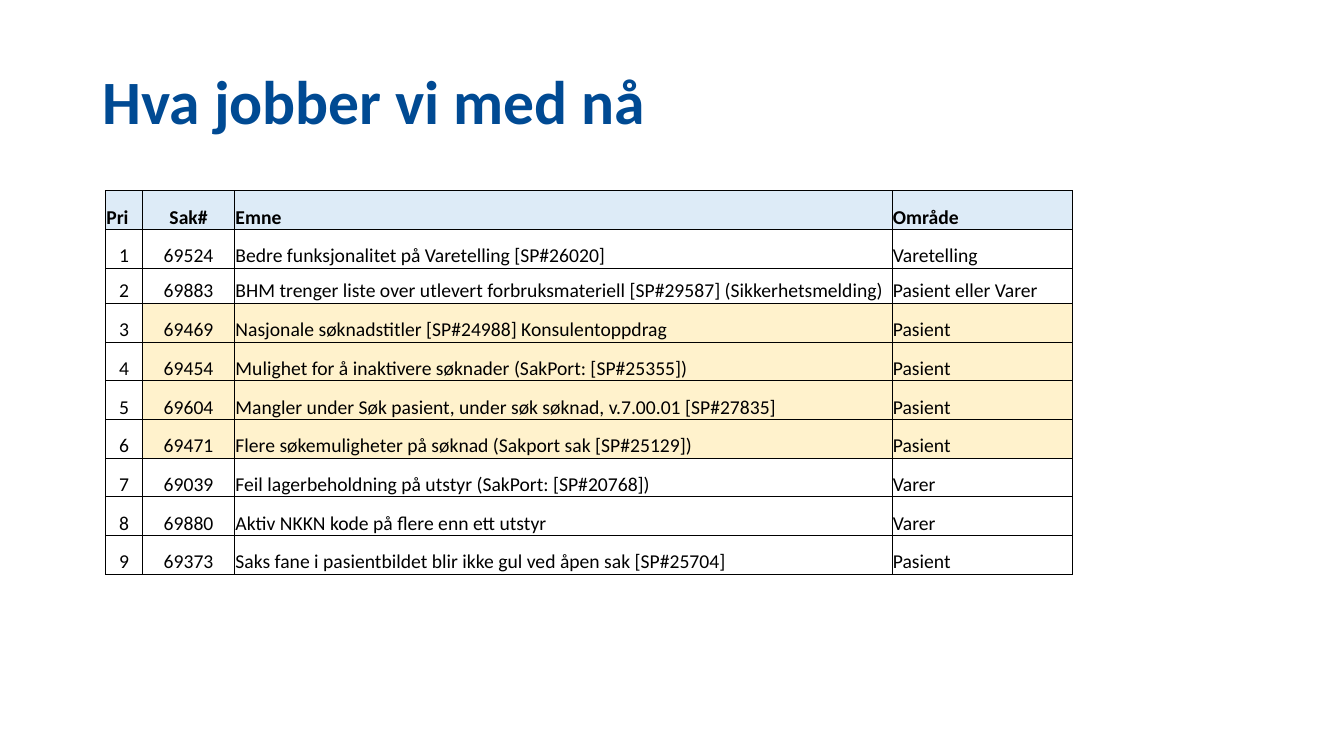
from dataclasses import dataclass

from lxml import etree
from pptx import Presentation, util as u
from pptx.dml.color import RGBColor
from pptx.enum import text as t
from pptx.oxml import ns


@dataclass(frozen=True)
class Theme:
    font: str = "Calibri"
    title: str = "004A93"
    ink: str = "000000"
    paper: str = "FFFFFF"
    head: str = "DDEBF7"
    mark: str = "FFF2CC"
    big: int = 44
    body: int = 14
    rule: float = 0.5


@dataclass(frozen=True)
class Column:
    name: str
    width: float  # percent of slide width
    align: t.PP_ALIGN = t.PP_ALIGN.LEFT
    tint: bool = True


@dataclass(frozen=True)
class Case:
    number: str
    topic: str
    area: str
    marked: bool = False
    height: float = 5.12  # percent of slide height


LOOK = Theme()
WIDE, HIGH = u.Inches(13.33), u.Inches(7.5)
MID = t.PP_ALIGN.CENTER
HEAD = 5.12

COLUMNS = [
    Column("Pri", 2.78, MID, tint=False),
    Column("Sak#", 6.83, MID),
    Column("Emne", 48.91),
    Column("Område", 13.43),
]
CASES = [
    Case("69524", "Bedre funksjonalitet på Varetelling [SP#26020]", "Varetelling"),
    Case("69883", "BHM trenger liste over utlevert forbruksmateriell [SP#29587] (Sikkerhetsmelding)",
         "Pasient eller Varer", height=4.67),
    Case("69469", "Nasjonale søknadstitler [SP#24988] Konsulentoppdrag", "Pasient", True),
    Case("69454", "Mulighet for å inaktivere søknader (SakPort: [SP#25355])", "Pasient", True),
    Case("69604", "Mangler under Søk pasient, under søk søknad, v.7.00.01 [SP#27835]", "Pasient", True),
    Case("69471", "Flere søkemuligheter på søknad (Sakport sak [SP#25129])", "Pasient", True),
    Case("69039", "Feil lagerbeholdning på utstyr (SakPort: [SP#20768])", "Varer"),
    Case("69880", "Aktiv NKKN kode på flere enn ett utstyr", "Varer"),
    Case("69373", "Saks fane i pasientbildet blir ikke gul ved åpen sak [SP#25704]", "Pasient"),
]


def across(share: float) -> int:
    return round(WIDE * share / 100)


def down(share: float) -> int:
    return round(HIGH * share / 100)


def style(para, size: float, color: str, bold: bool) -> None:
    for run in para.runs:
        run.font.name = LOOK.font
        run.font.size = u.Pt(size)
        run.font.bold = bold
        run.font.color.rgb = RGBColor.from_string(color)


def border(cell) -> None:
    props = cell._tc.get_or_add_tcPr()
    for side in ("a:lnL", "a:lnR", "a:lnT", "a:lnB"):
        line = etree.SubElement(props, ns.qn(side), w=str(u.Pt(LOOK.rule)))
        fill = etree.SubElement(line, ns.qn("a:solidFill"))
        etree.SubElement(fill, ns.qn("a:srgbClr"), val=LOOK.ink)


def write(cell, words: str, align: t.PP_ALIGN, fill: str, bold: bool) -> None:
    cell.margin_left = cell.margin_right = cell.margin_top = u.Inches(0.01)
    cell.margin_bottom = 0
    cell.vertical_anchor = t.MSO_ANCHOR.BOTTOM
    border(cell)
    cell.fill.solid()
    cell.fill.fore_color.rgb = RGBColor.from_string(fill)
    cell.text_frame.text = words
    para = cell.text_frame.paragraphs[0]
    para.alignment = align
    style(para, LOOK.body, LOOK.ink, bold)


def add_title(slide, words: str) -> None:
    box = slide.shapes.add_textbox(across(6.9), down(8.8), across(86.25), down(19.33))
    frame = box.text_frame
    frame.word_wrap = True
    frame.vertical_anchor = t.MSO_ANCHOR.TOP
    frame.text = words
    para = frame.paragraphs[0]
    para.line_spacing = 0.9
    style(para, LOOK.big, LOOK.title, True)


def add_cases(slide) -> None:
    heights = [HEAD] + [case.height for case in CASES]
    frame = slide.shapes.add_table(
        len(heights), len(COLUMNS), across(7.84), down(25.2),
        across(sum(col.width for col in COLUMNS)), down(sum(heights)))
    table = frame.table
    table.first_row = table.horz_banding = False
    for row, height in zip(table.rows, heights):
        row.height = down(height)

    for x, col in enumerate(COLUMNS):
        table.columns[x].width = across(col.width)
        # Header: the first label stays left above its centred numbers
        align = col.align if x else t.PP_ALIGN.LEFT
        write(table.cell(0, x), col.name, align, LOOK.head, True)

    # Cases in order of priority
    for y, case in enumerate(CASES, 1):
        words = (str(y), case.number, case.topic, case.area)
        for x, col in enumerate(COLUMNS):
            fill = LOOK.mark if case.marked and col.tint else LOOK.paper
            write(table.cell(y, x), words[x], col.align, fill, False)


def main() -> None:
    deck = Presentation()
    deck.slide_width, deck.slide_height = WIDE, HIGH
    slide = deck.slides.add_slide(deck.slide_layouts[6])
    add_title(slide, "Hva jobber vi med nå")
    add_cases(slide)
    deck.save("out.pptx")


if __name__ == "__main__":
    main()
